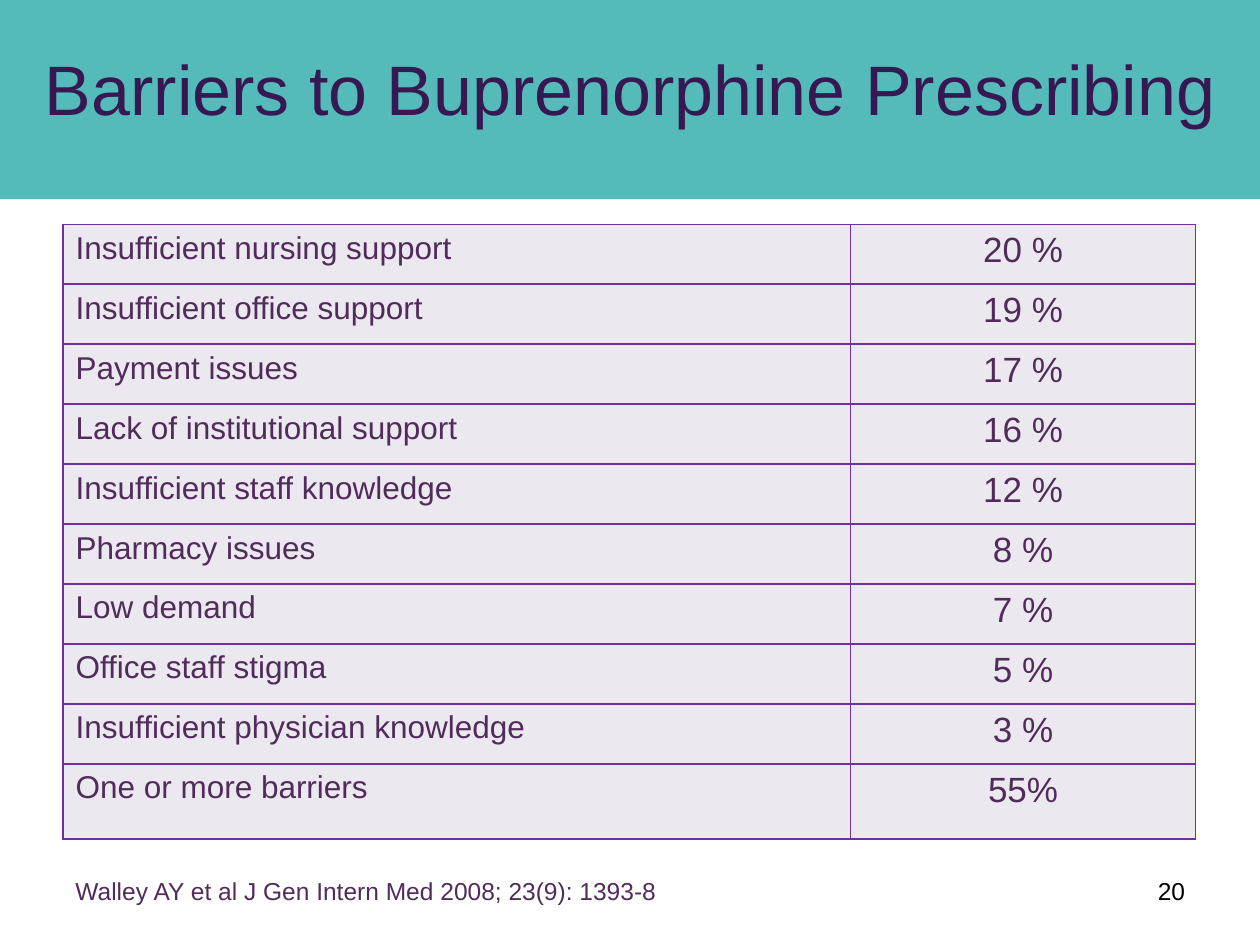
from lxml import etree
from pptx import Presentation
from pptx.dml.color import RGBColor
from pptx.enum.shapes import MSO_SHAPE
from pptx.enum.text import MSO_ANCHOR, MSO_AUTO_SIZE, PP_ALIGN
from pptx.oxml.ns import qn
from pptx.util import Inches, Pt

LEFT, CENTER = PP_ALIGN.LEFT, PP_ALIGN.CENTER
MIDDLE = MSO_ANCHOR.MIDDLE
RECTANGLE = MSO_SHAPE.RECTANGLE
NO_AUTOFIT = MSO_AUTO_SIZE.NONE
TITLE_ONLY = 5

FONT = "Arial"
COLORS = {
    "band": "54BABA",
    "title": "381850",
    "text": "512C5A",
    "number": "000000",
    "cell": "EBE8F0",
    "border": "7030A0",
}
BARRIERS = [
    ("Insufficient nursing support", "20 %"),
    ("Insufficient office support", "19 %"),
    ("Payment issues", "17 %"),
    ("Lack of institutional support", "16 %"),
    ("Insufficient staff knowledge", "12 %"),
    ("Pharmacy issues", "8 %"),
    ("Low demand", "7 %"),
    ("Office staff stigma", "5 %"),
    ("Insufficient physician knowledge", "3 %"),
    ("One or more barriers", "55%"),
]


def rgb(name):
    return RGBColor.from_string(COLORS[name])


def write(tf, text, size, color="text", align=LEFT, hanging=None):
    p = tf.paragraphs[0]
    p.alignment = align
    if hanging is not None:
        pPr = p._p.get_or_add_pPr()
        pPr.set("marL", str(hanging))
        pPr.set("indent", str(-hanging))
    r = p.add_run()
    r.text = text
    r.font.name = FONT
    r.font.size = Pt(size)
    r.font.color.rgb = rgb(color)


def add_header(slide, left, top, width, height):
    band = slide.shapes.add_shape(RECTANGLE, left, top, width, height)
    band.shadow.inherit = False
    band.fill.solid()
    band.fill.fore_color.rgb = rgb("band")
    band.line.fill.background()
    slide.shapes._spTree.insert(2, band._element)  # behind the title

    title = slide.shapes.title
    title.left, title.top = left, top + Inches(0.32)
    title.width, title.height = width, Inches(0.75)
    tf = title.text_frame
    tf.auto_size = NO_AUTOFIT
    tf.vertical_anchor = MIDDLE
    write(tf, "Barriers to Buprenorphine Prescribing", 40, "title", CENTER)


def format_cell(cell):
    """Draw all four borders, then the fill, which must follow them in the XML."""
    tcPr = cell._tc.get_or_add_tcPr()
    for side in ("a:lnL", "a:lnR", "a:lnT", "a:lnB"):
        ln = etree.SubElement(tcPr, qn(side), w=str(Pt(1)))
        fill = etree.SubElement(ln, qn("a:solidFill"))
        etree.SubElement(fill, qn("a:srgbClr"), val=COLORS["border"])
    cell.fill.solid()
    cell.fill.fore_color.rgb = rgb("cell")


def add_barrier_table(slide, left, top, width, height):
    table = slide.shapes.add_table(len(BARRIERS), 2, left, top, width, height).table
    table.first_row = table.horz_banding = False
    table.columns[0].width = Inches(6.25)
    table.columns[1].width = width - Inches(6.25)

    row_height = Inches(0.476)
    for row in table.rows:
        row.height = row_height
    table.rows[len(BARRIERS) - 1].height = height - row_height * (len(BARRIERS) - 1)

    formats = [{"size": 18}, {"size": 20, "align": CENTER}]
    for i, texts in enumerate(BARRIERS):
        for j, text in enumerate(texts):
            cell = table.cell(i, j)
            format_cell(cell)
            write(cell.text_frame, text, hanging=Inches(0.38), **formats[j])


def add_footer(slide, left, top, width, height):
    number_width = Inches(0.55)
    parts = [
        (left, Inches(4.83), "Walley AY et al J Gen Intern Med 2008; 23(9): 1393-8", "text"),
        (left + width - number_width, number_width, "20", "number"),
    ]
    for x, w, text, color in parts:
        tf = slide.shapes.add_textbox(x, top, w, height).text_frame
        tf.word_wrap = True
        write(tf, text, 14, color)


def main():
    prs = Presentation()
    prs.slide_width, prs.slide_height = Inches(10), Inches(7.5)
    slide = prs.slides.add_slide(prs.slide_layouts[TITLE_ONLY])
    add_header(slide, 0, 0, prs.slide_width, Inches(1.58))
    add_barrier_table(slide, Inches(0.5), Inches(1.78), Inches(8.99), Inches(4.88))
    add_footer(slide, Inches(0.5), Inches(6.9), Inches(9.14), Inches(0.34))
    prs.save("out.pptx")


if __name__ == "__main__":
    main()
